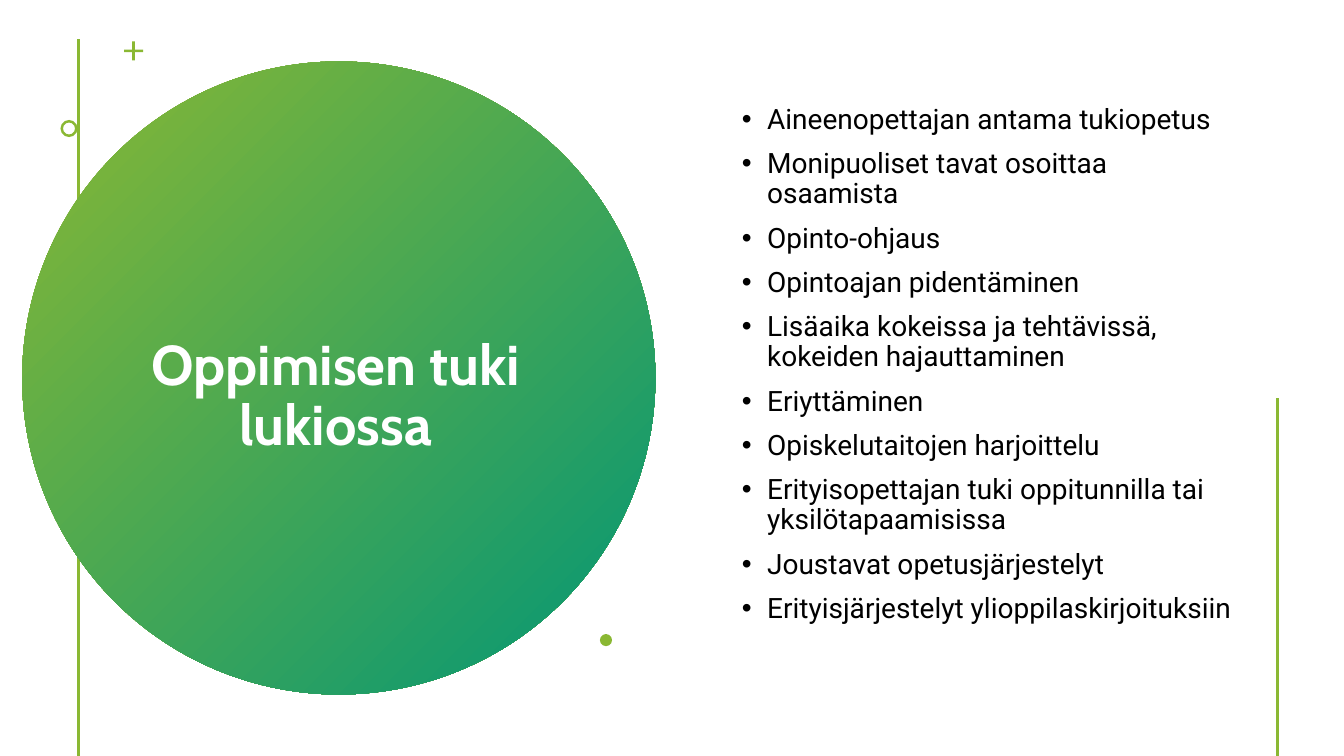
from pptx import Presentation
from pptx import util as u
from pptx.dml.color import RGBColor
from pptx.enum import shapes, text
from pptx.oxml.ns import qn
from lxml import etree

LIME = RGBColor(0x8A, 0xB8, 0x33)
TEAL = RGBColor(0x02, 0x96, 0x76)
WHITE = RGBColor(0xFF, 0xFF, 0xFF)
BLACK = RGBColor(0x00, 0x00, 0x00)

SUPPORT_FORMS = [
    "Aineenopettajan antama tukiopetus",
    "Monipuoliset tavat osoittaa osaamista",
    "Opinto-ohjaus",
    "Opintoajan pidentäminen",
    "Lisäaika kokeissa ja tehtävissä, kokeiden hajauttaminen",
    "Eriyttäminen",
    "Opiskelutaitojen harjoittelu",
    "Erityisopettajan tuki oppitunnilla tai yksilötapaamisissa",
    "Joustavat opetusjärjestelyt",
    "Erityisjärjestelyt ylioppilaskirjoituksiin",
]


class SupportSlide:
    """Draws styled elements on one slide, placed on a grid of 75 rows of square cells."""

    heading_font = "Cabin"
    body_font = "Roboto"
    line_spacing = 0.9

    def __init__(self, deck):
        self.slide = deck.slides.add_slide(deck.slide_layouts[6])
        self.cell = deck.slide_height / 75

    def grid(self, *cells):
        return [round(count * self.cell) for count in cells]

    def rule(self, column, top, bottom):
        stroke = self.slide.shapes.add_connector(
            shapes.MSO_CONNECTOR.STRAIGHT, *self.grid(column, top, column, bottom))
        stroke.line.color.rgb = LIME
        stroke.line.width = u.Pt(2)
        etree.SubElement(stroke._element.spPr, qn("a:effectLst"))

    def ornament(self, preset, column, row, size, adjustment=None):
        mark = self.slide.shapes.add_shape(preset, *self.grid(column, row, size, size))
        mark.shadow.inherit = False
        mark.line.fill.background()
        mark.fill.solid()
        mark.fill.fore_color.rgb = LIME
        if adjustment is not None:
            mark.adjustments[0] = adjustment
        return mark

    def gradient_disc(self, column, row, size):
        disc = self.ornament(shapes.MSO_SHAPE.OVAL, column, row, size)
        disc.fill.gradient()
        disc.fill.gradient_angle = 315
        for stop, color in zip(disc.fill.gradient_stops, (LIME, TEAL)):
            stop.color.rgb = color

    def frame(self, column, row, columns, rows):
        frame = self.slide.shapes.add_textbox(
            *self.grid(column, row, columns, rows)).text_frame
        frame.word_wrap = True
        frame.vertical_anchor = text.MSO_ANCHOR.MIDDLE
        return frame

    def add_wording(self, paragraph, wording, font, size, color, bold=False):
        paragraph.line_spacing = self.line_spacing
        run = paragraph.add_run()
        run.text = wording
        run.font.name = font
        run.font.size = u.Pt(size)
        run.font.color.rgb = color
        run.font.bold = bold

    def heading(self, wording, *place):
        paragraph = self.frame(*place).paragraphs[0]
        paragraph.alignment = text.PP_ALIGN.CENTER
        self.add_wording(paragraph, wording, self.heading_font, 40, WHITE, bold=True)

    def bullets(self, entries, *place):
        frame = self.frame(*place)
        for index, entry in enumerate(entries):
            paragraph = frame.add_paragraph() if index else frame.paragraphs[0]
            paragraph.space_before = u.Pt(10 if index else 0)
            self.add_wording(paragraph, entry, self.body_font, 20, BLACK)
            properties = paragraph._p.get_or_add_pPr()
            properties.set("marL", str(u.Inches(0.25)))
            properties.set("indent", str(-u.Inches(0.25)))
            etree.SubElement(properties, qn("a:buFont"), typeface="Arial")
            etree.SubElement(properties, qn("a:buChar"), char="•")


def main():
    deck = Presentation()
    deck.slide_width, deck.slide_height = u.Inches(13.33), u.Inches(7.5)
    page = SupportSlide(deck)
    page.rule(7.8, 3.9, 75)
    page.gradient_disc(2.2, 6.1, 62.8)
    page.heading("Oppimisen tuki lukiossa", 11.7, 15.8, 43.2, 47.2)
    page.ornament(shapes.MSO_SHAPE.CROSS, 12.3, 4.1, 1.9, 0.43)
    page.ornament(shapes.MSO_SHAPE.DONUT, 6, 11.9, 1.7, 0.15)
    page.bullets(SUPPORT_FORMS, 72.6, 9.7, 51.2, 53)
    page.ornament(shapes.MSO_SHAPE.OVAL, 59.5, 62.9, 1.2)
    page.rule(126.7, 39.5, 75)
    deck.save("out.pptx")


if __name__ == "__main__":
    main()
